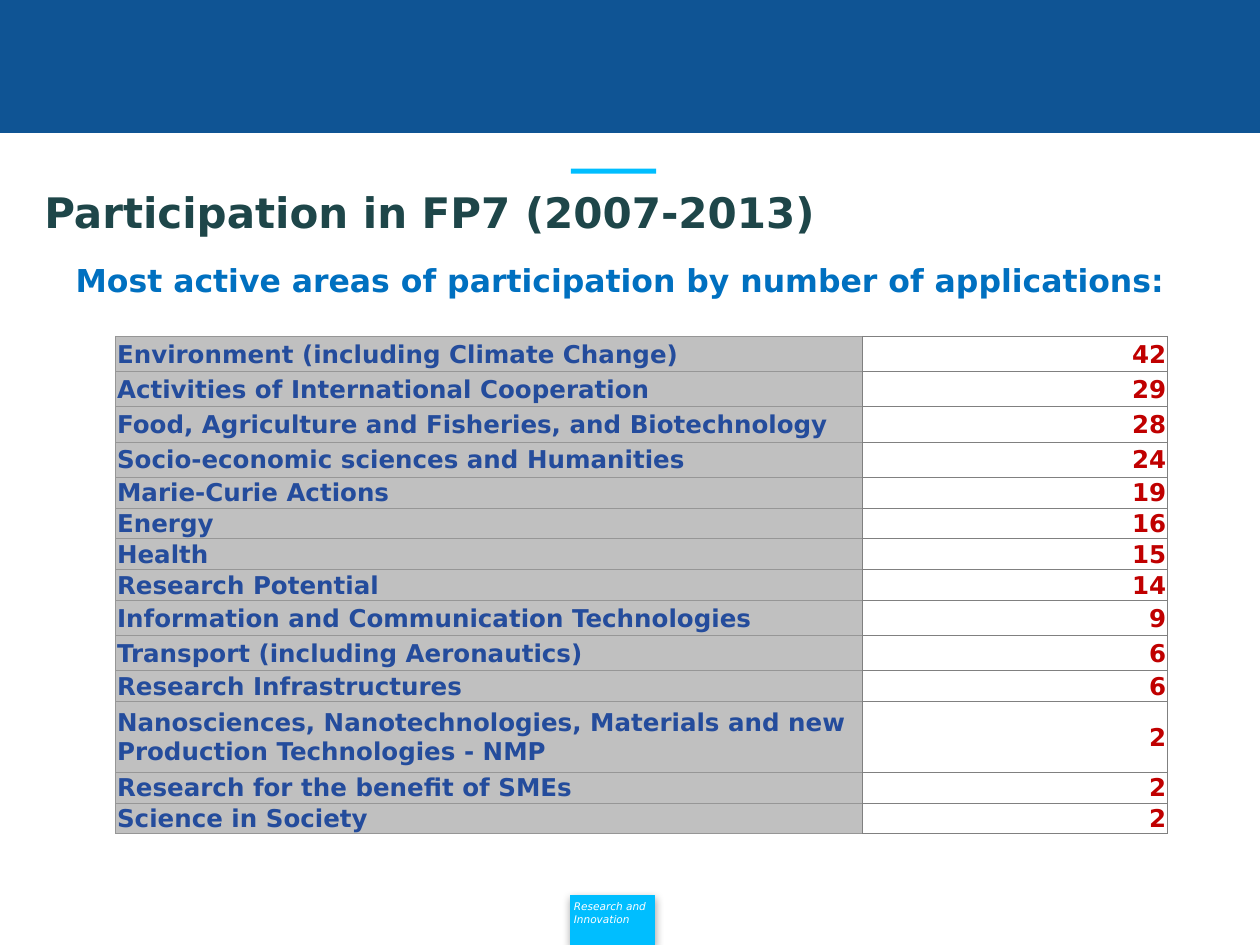
from lxml.etree import SubElement
from pptx import Presentation
from pptx.dml.color import RGBColor
from pptx.enum.shapes import MSO_SHAPE
from pptx.enum.text import MSO_ANCHOR, MSO_AUTO_SIZE, PP_ALIGN
from pptx.oxml.ns import qn
from pptx.util import Cm, Pt

NAVY, CYAN, WHITE = "0F5494", "00BEFF", "FFFFFF"
LIGHT_RULE, DARK_RULE = "969696", "808080"
TALL, LOW, DOUBLE = 0.71, 0.62, 1.43  # row heights in cm

AREAS = [
    ("Environment (including Climate Change)", 42, TALL),
    ("Activities of International Cooperation", 29, TALL),
    ("Food, Agriculture and Fisheries, and Biotechnology", 28, TALL),
    ("Socio-economic sciences and Humanities", 24, TALL),
    ("Marie-Curie Actions", 19, LOW),
    ("Energy", 16, LOW),
    ("Health", 15, LOW),
    ("Research Potential", 14, LOW),
    ("Information and Communication Technologies", 9, TALL),
    ("Transport (including Aeronautics)", 6, TALL),
    ("Research Infrastructures", 6, LOW),
    ("Nanosciences, Nanotechnologies, Materials and new "
     "Production Technologies - NMP", 2, DOUBLE),
    ("Research for the benefit of SMEs", 2, LOW),
    ("Science in Society", 2, LOW),
]


def color(value):
    return RGBColor.from_string(value)


def write(para, text, size=14, ink=WHITE, bold=False, italic=False,
          align=PP_ALIGN.LEFT):
    para.alignment = align
    para.space_before = Pt(0)
    span = para.add_run()
    span.text = text
    font = span.font
    font.name, font.size = "DejaVu Sans", Pt(size)
    font.bold, font.italic = bold, italic
    font.color.rgb = color(ink)


class SlideBuilder:
    def __init__(self, page):
        self.page = page

    def bar(self, left, top, width, height, fill, outlined=True):
        box = self.page.shapes.add_shape(
            MSO_SHAPE.RECTANGLE, Cm(left), Cm(top), Cm(width), Cm(height))
        box.shadow.inherit = False
        box.fill.solid()
        box.fill.fore_color.rgb = color(fill)
        if outlined:
            box.line.color.rgb = color(fill)
            box.line.width = Pt(0.75)
        else:
            box.line.fill.background()
        return box

    def tag(self, left, top, width, height, lines):
        box = self.bar(left, top, width, height, CYAN)
        effects = box._element.spPr.find(qn("a:effectLst"))
        shadow = SubElement(effects, qn("a:outerShdw"), blurRad=str(Pt(5)),
                            dist=str(Pt(1.8)), dir="5400000", rotWithShape="0")
        black = SubElement(shadow, qn("a:srgbClr"), val="000000")
        SubElement(black, qn("a:alpha"), val="35000")
        frame = box.text_frame
        frame.word_wrap = True
        frame.vertical_anchor = MSO_ANCHOR.TOP
        frame.margin_left, frame.margin_right = Cm(0.07), Cm(0)
        frame.margin_top = frame.margin_bottom = Cm(0.1)
        for index, line in enumerate(lines):
            para = frame.add_paragraph() if index else frame.paragraphs[0]
            write(para, line, size=6, italic=True)

    def placeholder(self, box, left, top, width, height, text, anchor, **style):
        box.left, box.top = Cm(left), Cm(top)
        box.width, box.height = Cm(width), Cm(height)
        frame = box.text_frame
        frame.word_wrap = True
        frame.auto_size = MSO_AUTO_SIZE.NONE
        frame.vertical_anchor = anchor
        para = frame.paragraphs[0]
        properties = para._p.get_or_add_pPr()
        properties.set("marL", "0")
        properties.set("indent", "0")
        SubElement(properties, qn("a:buNone"))
        write(para, text, bold=True, **style)

    def cell(self, cell, text, fill, borders, **style):
        cell.vertical_anchor = MSO_ANCHOR.MIDDLE
        cell.margin_left = cell.margin_right = cell.margin_top = Cm(0.03)
        cell.margin_bottom = Cm(0)
        properties = cell._tc.get_or_add_tcPr()
        for side, value in zip(("lnL", "lnR", "lnT", "lnB"), borders):
            line = SubElement(properties, qn("a:" + side), w=str(Pt(0.5)))
            solid = SubElement(line, qn("a:solidFill"))
            SubElement(solid, qn("a:srgbClr"), val=value)
        cell.fill.solid()
        cell.fill.fore_color.rgb = color(fill)
        write(cell.text_frame.paragraphs[0], text, bold=True, **style)

    def table(self, left, top, widths, rows):
        height = sum(row[2] for row in rows)
        table = self.page.shapes.add_table(
            len(rows), len(widths), Cm(left), Cm(top),
            Cm(sum(widths)), Cm(height)).table
        table.first_row = table.horz_banding = False
        for column, width in zip(table.columns, widths):
            column.width = Cm(width)
        area_borders = (LIGHT_RULE, DARK_RULE, LIGHT_RULE, LIGHT_RULE)
        for index, (area, count, row_height) in enumerate(rows):
            table.rows[index].height = Cm(row_height)
            self.cell(table.cell(index, 0), area, "C0C0C0", area_borders,
                      ink="244C9C")
            self.cell(table.cell(index, 1), str(count), WHITE,
                      (DARK_RULE,) * 4, ink="C00000", align=PP_ALIGN.RIGHT)


def main():
    deck = Presentation()
    deck.slide_width, deck.slide_height = Cm(25.4), Cm(19.05)
    page = deck.slides.add_slide(deck.slide_layouts[1])
    builder = SlideBuilder(page)

    # Header band, footer tag and accent line
    builder.bar(0, 0, 25.4, 2.67, NAVY)
    builder.tag(11.5, 18.05, 1.7, 1, ["Research and", "Innovation"])
    builder.bar(11.51, 3.4, 1.72, 0.1, CYAN, outlined=False)

    # Title and subtitle
    builder.placeholder(page.shapes.title, 0.64, 2.97, 23.47, 2.59,
                        "Participation in FP7 (2007-2013)",
                        MSO_ANCHOR.MIDDLE, size=24, ink="1E4649")
    builder.placeholder(
        page.placeholders[1], 1.27, 5.13, 22.86, 11.61,
        "Most active areas of participation by number of applications:",
        MSO_ANCHOR.TOP, size=18, ink="0070C0")

    # Applications per area
    builder.table(2.33, 6.78, [15.06, 6.15], AREAS)

    deck.save("out.pptx")


if __name__ == "__main__":
    main()
